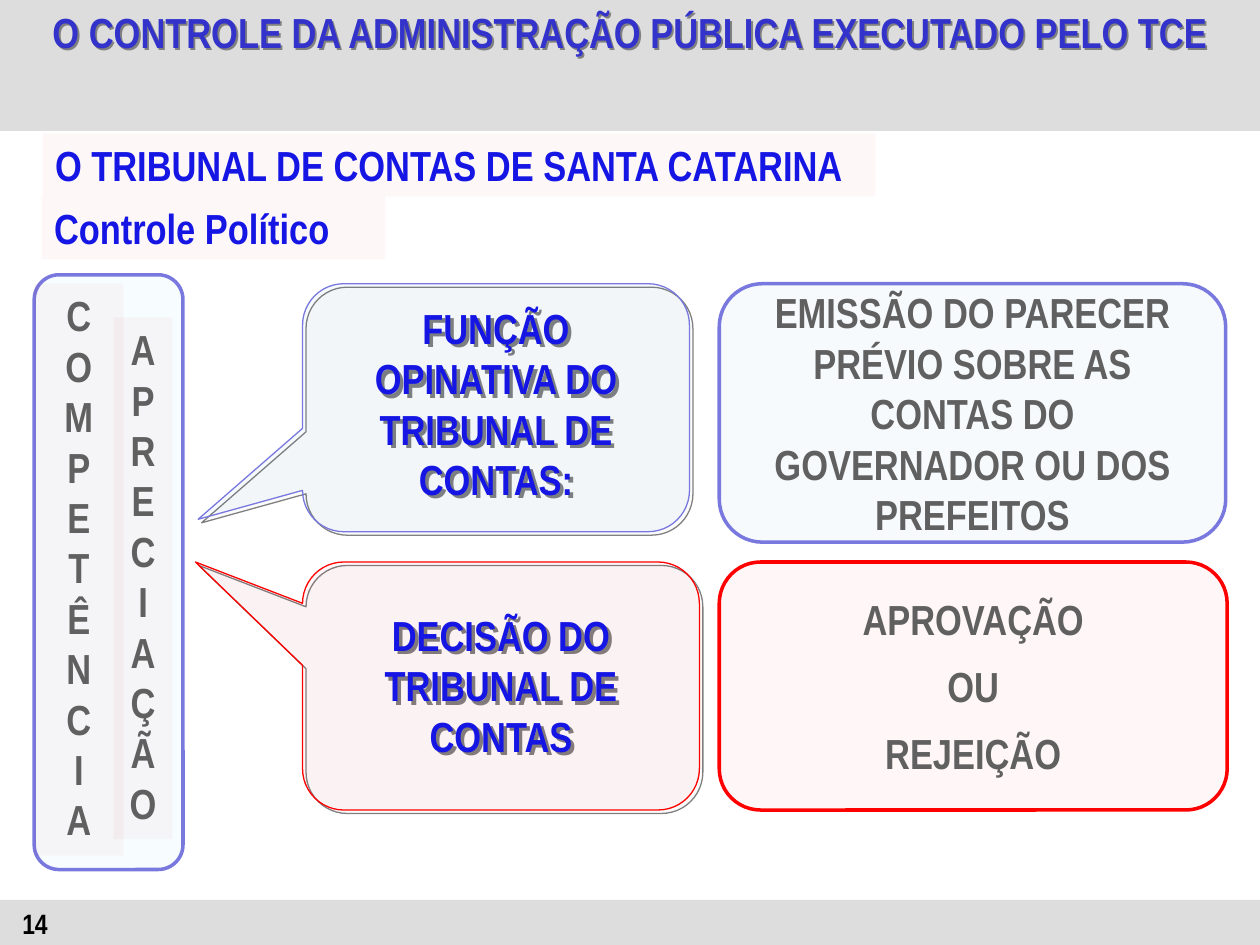
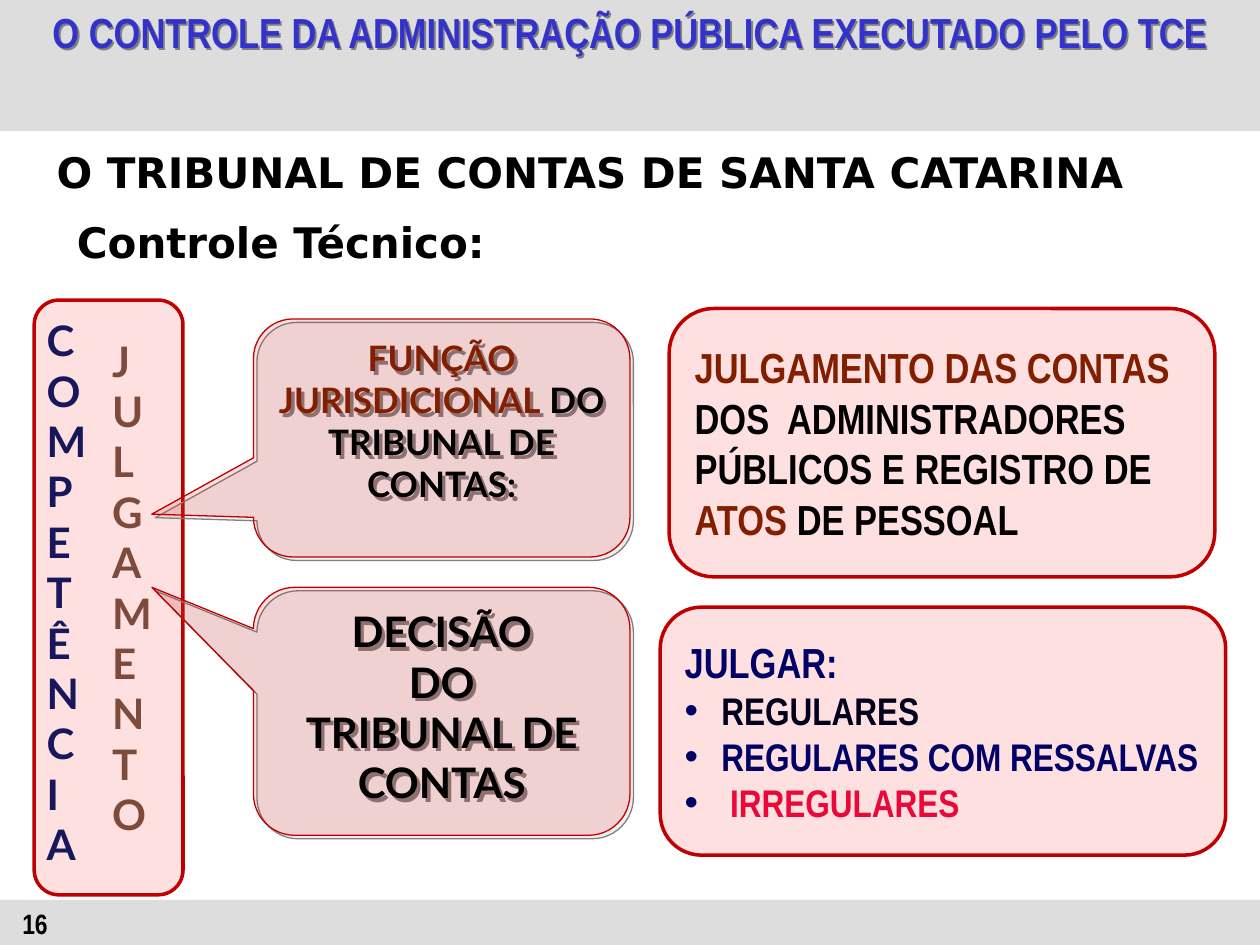
from lxml import etree
from pptx import Presentation
from pptx.dml.color import RGBColor
from pptx.enum.shapes import MSO_SHAPE as Preset
from pptx.enum.text import MSO_ANCHOR as Anchor, PP_ALIGN as Align
from pptx.oxml import parse_xml
from pptx.oxml.ns import nsdecls, qn
from pptx.util import Cm, Pt

BAND_GREY = RGBColor(0xDD, 0xDD, 0xDD)
TITLE_BLUE = RGBColor(0x33, 0x33, 0xCC)
STRONG_BLUE = RGBColor(0x16, 0x16, 0xE4)
LINE_BLUE = RGBColor(0x78, 0x78, 0xDE)
SKY = RGBColor(0x00, 0xB0, 0xF0)
BLUE = RGBColor(0x00, 0x70, 0xC0)
RED = RGBColor(0xFF, 0x00, 0x00)
DARK_RED = RGBColor(0xC0, 0x00, 0x00)
TEXT_GREY = RGBColor(0x60, 0x60, 0x60)
BLACK = RGBColor(0x00, 0x00, 0x00)
RUST = RGBColor(0x82, 0x1F, 0x00)
BROWN = RGBColor(0x7C, 0x4B, 0x3B)
NAVY = RGBColor(0x00, 0x00, 0x66)
INK = RGBColor(0x00, 0x00, 0x1E)
LETTER_NAVY = RGBColor(0x17, 0x17, 0x5C)
CRIMSON = RGBColor(0xEA, 0x08, 0x38)

NARROW, LATO, DEJAVU = "Arial Narrow", "Lato", "DejaVu Sans"
TITLE = "O CONTROLE DA ADMINISTRAÇÃO PÚBLICA EXECUTADO PELO TCE"
HEADING = "O TRIBUNAL DE CONTAS DE SANTA CATARINA"


def add_box(page, preset, place, fill=None, opacity=100, line=None, weight=2, shadow=0):
    """Add a preset shape; place is left, top, width, height in cm, shadow its distance in points."""
    box = page.shapes.add_shape(preset, *[Cm(length) for length in place])
    box.shadow.inherit = False
    if fill is None:
        box.fill.background()
    else:
        box.fill.solid()
        box.fill.fore_color.rgb = fill
        if opacity < 100:
            colour = box.fill._xPr.find(qn("a:solidFill"))[0]
            etree.SubElement(colour, qn("a:alpha")).set("val", str(opacity * 1000))
    if line is None:
        box.line.fill.background()
    else:
        box.line.color.rgb = line
        box.line.width = Pt(weight)
    if shadow:
        box._element.spPr.find(qn("a:effectLst")).append(parse_xml(
            f'<a:outerShdw {nsdecls("a")} dist="{Pt(shadow)}" dir="2700000" algn="ctr" '
            'rotWithShape="0"><a:srgbClr val="808080"/></a:outerShdw>'))
    return box


def write(box, paragraphs, font=NARROW, size=24, align=Align.LEFT, anchor=Anchor.TOP):
    """Fill a box; each paragraph is a list of (text, colour) spans."""
    frame = box.text_frame
    frame.word_wrap = True
    frame.vertical_anchor = anchor
    for index, spans in enumerate(paragraphs):
        para = frame.add_paragraph() if index else frame.paragraphs[0]
        para.alignment = align
        for text, colour in spans:
            span = para.add_run()
            span.text = text
            span.font.name = font
            span.font.size = Pt(size)
            span.font.bold = True
            span.font.color.rgb = colour
    return frame


deck = Presentation()
deck.slide_width, deck.slide_height = Cm(25.4), Cm(19.05)
pages = []
for number in ("14", "16"):
    page = deck.slides.add_slide(deck.slide_layouts[6])
    add_box(page, Preset.RECTANGLE, (0, 18.14, 25.4, 0.91), BAND_GREY)
    add_box(page, Preset.RECTANGLE, (0, 0, 25.4, 2.64), BAND_GREY)
    title = add_box(page, Preset.RECTANGLE, (0, 0, 25.4, 2.31), shadow=1.5)
    write(title, [[(TITLE, TITLE_BLUE)]], align=Align.CENTER)
    page_number = add_box(page, Preset.RECTANGLE, (0.2, 18.16, 5.28, 1.27))
    write(page_number, [[(number, BLACK)]], size=16)
    pages.append(page)
political, technical = pages

# Political control: headings and letter columns
add_box(political, Preset.ROUNDED_RECTANGLE, (0.69, 5.54, 3, 11.99), SKY, 3, LINE_BLUE)
for text, place in (
    (HEADING, (0.86, 2.69, 16.79, 1.27)),
    ("Controle Político", (0.84, 3.96, 6.93, 1.27)),
):
    heading = add_box(political, Preset.RECTANGLE, place, DARK_RED, 3)
    write(heading, [[(text, STRONG_BLUE)]])
for word, place in (
    ("COMPETÊNCIA", (0.69, 5.72, 1.8, 11.53)),
    ("APRECIAÇÃO", (2.29, 6.4, 1.19, 10.52)),
):
    column = add_box(political, Preset.RECTANGLE, place, DARK_RED, 3)
    write(column, [[(letter, TEXT_GREY)] for letter in word], align=Align.CENTER)

# Political control: callouts and outcomes
for lines, place, tip, fill, line, margin_top in (
    (("FUNÇÃO OPINATIVA DO", "TRIBUNAL DE CONTAS:"),
     (6.1, 5.72, 7.8, 5), (-0.77, 0.45), BLUE, LINE_BLUE, 0.13),
    (("DECISÃO DO", "TRIBUNAL DE", "CONTAS"),
     (6.1, 11.33, 8, 5), (-0.77, -0.5), RED, RED, 0.71),
):
    callout = add_box(political, Preset.ROUNDED_RECTANGULAR_CALLOUT, place, fill, 3, line, 0.75, 2.8)
    callout.adjustments[0], callout.adjustments[1] = tip
    frame = write(callout, [[(text, STRONG_BLUE)] for text in lines], align=Align.CENTER)
    frame.margin_top = Cm(margin_top)
for lines, place, fill, line, gap in (
    (("EMISSÃO DO PARECER", "PRÉVIO SOBRE AS CONTAS DO", "GOVERNADOR OU DOS PREFEITOS"),
     (14.5, 5.72, 10.21, 5.21), BLUE, LINE_BLUE, 0),
    (("APROVAÇÃO", "OU", "REJEIÇÃO"), (14.5, 11.33, 10.24, 5), RED, RED, 9.5),
):
    outcome = add_box(political, Preset.ROUNDED_RECTANGLE, place, fill, 3, line)
    frame = write(outcome, [[(text, TEXT_GREY)] for text in lines],
                  align=Align.CENTER, anchor=Anchor.MIDDLE)
    for para in frame.paragraphs[1:]:
        para.space_before = Pt(gap)

# Technical control: headings and letter columns
add_box(technical, Preset.ROUNDED_RECTANGLE, (0.69, 6.05, 3, 11.99), RED, 12, DARK_RED)
for text, place in (
    (HEADING, (0.89, 2.82, 23.39, 1.3)),
    ("Controle Técnico:", (1.3, 4.24, 9.19, 1.3)),
):
    write(add_box(technical, Preset.RECTANGLE, place), [[(text, BLACK)]], DEJAVU)
for word, place, colour in (
    ("COMPETÊNCIA", (0.69, 6.22, 1.8, 11.53), LETTER_NAVY),
    ("JULGAMENTO", (2.01, 6.63, 1.42, 10.52), BROWN),
):
    column = add_box(technical, Preset.RECTANGLE, place)
    write(column, [[(letter, colour)] for letter in word], LATO)

# Technical control: callouts and judgements
for paragraphs, place, tip, size in (
    ([[("FUNÇÃO JURISDICIONAL", RUST), (" DO", BLACK)], [("TRIBUNAL DE CONTAS:", BLACK)]],
     (5.11, 6.43, 7.59, 4.8), (-0.77, 0.32), 20),
    ([[("DECISÃO", BLACK)], [("DO", BLACK)], [("TRIBUNAL DE CONTAS", BLACK)]],
     (5.11, 11.84, 7.59, 5), (-0.77, -0.5), 24),
):
    callout = add_box(technical, Preset.ROUNDED_RECTANGULAR_CALLOUT, place, RED, 12,
                      DARK_RED, 0.75, 2.8)
    callout.adjustments[0], callout.adjustments[1] = tip
    write(callout, paragraphs, LATO, size, Align.CENTER)

accounts = add_box(technical, Preset.ROUNDED_RECTANGLE, (13.49, 6.22, 11, 5.41), RED, 12, DARK_RED)
write(accounts, [[("JULGAMENTO DAS CONTAS", RUST),
                  (" DOS  ADMINISTRADORES PÚBLICOS E REGISTRO DE ", BLACK),
                  ("ATOS ", RUST), ("DE PESSOAL", BLACK)]], anchor=Anchor.MIDDLE)

verdicts = add_box(technical, Preset.ROUNDED_RECTANGLE, (13.31, 12.24, 11.4, 5), RED, 12, DARK_RED)
frame = write(verdicts, [[("JULGAR:", NAVY)], [("REGULARES", INK)],
                         [("REGULARES COM RESSALVAS", NAVY)],
                         [(" ", NAVY), ("IRREGULARES", CRIMSON)]],
              size=22, anchor=Anchor.MIDDLE)
frame.paragraphs[0].runs[0].font.size = Pt(24)
for para in frame.paragraphs[1:]:
    properties = para._p.get_or_add_pPr()
    properties.set("marL", str(Cm(0.74)))
    properties.set("indent", str(-Cm(0.74)))
    bullet_colour = etree.SubElement(properties, qn("a:buClr"))
    etree.SubElement(bullet_colour, qn("a:srgbClr")).set("val", str(NAVY))
    etree.SubElement(properties, qn("a:buFont")).set("typeface", "Arial")
    etree.SubElement(properties, qn("a:buChar")).set("char", "•")

deck.save("out.pptx")
